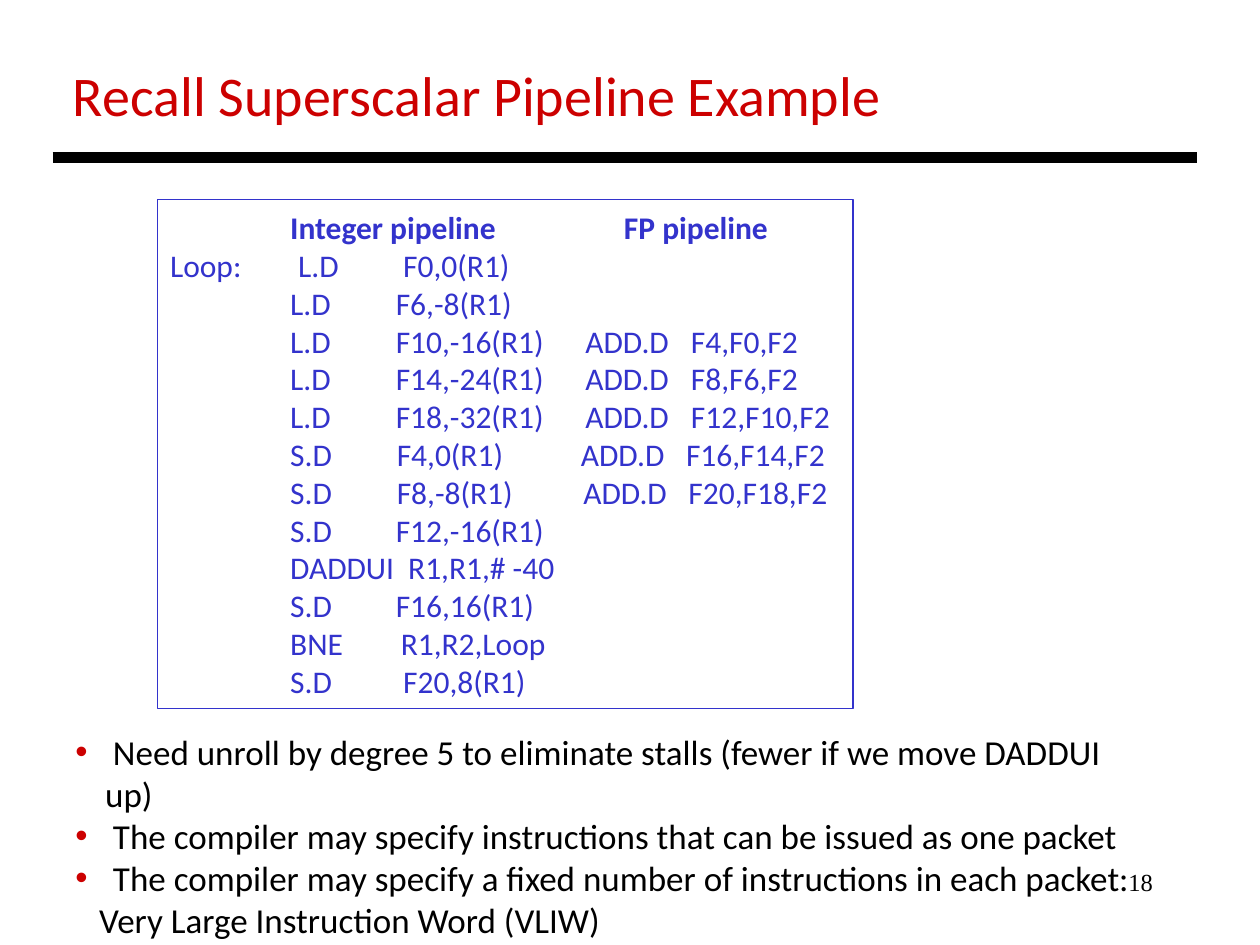
from dataclasses import dataclass

import pptx
import pptx.dml.color
import pptx.enum.shapes
import pptx.enum.text
import pptx.oxml
import pptx.oxml.ns
import pptx.util
from pptx.util import Cm

RED, BLUE, BLACK = "CC0000", "3333CC", "000000"
ALIGN = pptx.enum.text.PP_ALIGN
ANCHOR = pptx.enum.text.MSO_ANCHOR


@dataclass(frozen=True)
class CodeRow:
    """One line of the listing; stops are tab positions in cm."""
    cells: tuple[str, ...]
    stops: tuple[float, ...] = (2.42, 4.55, 8.37, 10.5)
    bold: bool = False


@dataclass(frozen=True)
class Point:
    text: str
    bullet: bool = True


CODE_ROWS = (
    CodeRow(("", "Integer pipeline", "FP pipeline"), (2.42, 9.15), bold=True),
    CodeRow(("Loop:", "L.D", "F0,0(R1)"), (2.58, 4.7)),
    CodeRow(("", "L.D", "F6,-8(R1)")),
    CodeRow(("", "L.D", "F10,-16(R1)", "ADD.D", "F4,F0,F2")),
    CodeRow(("", "L.D", "F14,-24(R1)", "ADD.D", "F8,F6,F2")),
    CodeRow(("", "L.D", "F18,-32(R1)", "ADD.D", "F12,F10,F2")),
    CodeRow(("", "S.D", "F4,0(R1)", "ADD.D", "F16,F14,F2"), (2.42, 4.57, 8.28, 10.4)),
    CodeRow(("", "S.D", "F8,-8(R1)", "ADD.D", "F20,F18,F2"), (2.42, 4.57, 8.33, 10.45)),
    CodeRow(("", "S.D", "F12,-16(R1)")),
    CodeRow(("", "DADDUI", "R1,R1,# -40"), (2.42, 4.8)),
    CodeRow(("", "S.D", "F16,16(R1)")),
    CodeRow(("", "BNE", "R1,R2,Loop"), (2.42, 4.65)),
    CodeRow(("", "S.D", "F20,8(R1)"), (2.42, 4.7)),
)
POINTS = (
    Point(" Need unroll by degree 5 to eliminate stalls (fewer if we move DADDUI up)"),
    Point(" The compiler may specify instructions that can be issued as one packet"),
    Point(" The compiler may specify a fixed number of instructions in each packet:"),
    Point("Very Large Instruction Word (VLIW)", bullet=False),
)


def color(value: str) -> pptx.dml.color.RGBColor:
    return pptx.dml.color.RGBColor.from_string(value)


def format_text(paragraph, size: float, text_color: str, font: str = "Calibri",
                bold: bool = False, align=ALIGN.LEFT) -> None:
    paragraph.alignment = align
    for run in paragraph.runs:
        run.font.name = font
        run.font.size = pptx.util.Pt(size)
        run.font.bold = bold
        run.font.color.rgb = color(text_color)


def add_child(parent, tag: str, **attributes: str):
    child = pptx.oxml.parse_xml(f"<{tag} {pptx.oxml.ns.nsdecls('a')}/>")
    for name, value in attributes.items():
        child.set(name, value)
    parent.append(child)
    return child


def set_tab_stops(paragraph, stops: tuple[float, ...]) -> None:
    tab_list = add_child(paragraph._p.get_or_add_pPr(), "a:tabLst")
    for stop in stops:
        add_child(tab_list, "a:tab", pos=str(Cm(stop)), algn="l")


def set_indent(paragraph, left: float, first_line: float) -> None:
    properties = paragraph._p.get_or_add_pPr()
    properties.set("marL", str(Cm(left)))
    properties.set("indent", str(Cm(first_line)))


def set_bullet(paragraph) -> None:
    properties = paragraph._p.get_or_add_pPr()
    add_child(add_child(properties, "a:buClr"), "a:srgbClr", val=RED)
    add_child(properties, "a:buFont", typeface="Arial")
    add_child(properties, "a:buChar", char="•")


def add_text_box(slide, left: float, top: float, width: float, height: float):
    box = slide.shapes.add_textbox(Cm(left), Cm(top), Cm(width), Cm(height))
    box.text_frame.word_wrap = True
    return box.text_frame


def add_rule(slide) -> None:
    rule = slide.shapes.add_connector(
        pptx.enum.shapes.MSO_CONNECTOR.STRAIGHT, Cm(1.06), Cm(3.18), Cm(24.13), Cm(3.18))
    rule.line.color.rgb = color(BLACK)
    rule.line.width = pptx.util.Pt(6)
    add_child(rule._element.spPr, "a:effectLst")


def add_code(slide) -> None:
    shape = slide.shapes.add_shape(
        pptx.enum.shapes.MSO_SHAPE.RECTANGLE, Cm(3.18), Cm(4.02), Cm(14.02), Cm(10.26))
    shape.shadow.inherit = False
    shape.fill.background()
    shape.line.color.rgb = color(BLUE)
    shape.line.width = pptx.util.Pt(0.75)
    frame = shape.text_frame
    frame.word_wrap = False
    frame.vertical_anchor = ANCHOR.MIDDLE
    frame.text = "\n".join("\t".join(row.cells) for row in CODE_ROWS)
    for paragraph, row in zip(frame.paragraphs, CODE_ROWS):
        format_text(paragraph, 18, BLUE, bold=row.bold)
        set_tab_stops(paragraph, row.stops)


def add_points(slide) -> None:
    frame = add_text_box(slide, 1.27, 14.6, 22, 3.68)
    frame.text = "\n".join(point.text for point in POINTS)
    for paragraph, point in zip(frame.paragraphs, POINTS):
        format_text(paragraph, 20, BLACK)
        if point.bullet:
            set_indent(paragraph, 0.6, -0.6)
            set_bullet(paragraph)
        else:
            set_indent(paragraph, 0.48, 0)


def main() -> None:
    presentation = pptx.Presentation()
    presentation.slide_width, presentation.slide_height = Cm(25.4), Cm(19.05)
    slide = presentation.slides.add_slide(presentation.slide_layouts[6])

    page_number = add_text_box(slide, 18.21, 17.35, 5.28, 1.27)
    page_number.text = "18"
    format_text(page_number.paragraphs[0], 14, BLACK, "Times New Roman", align=ALIGN.RIGHT)

    title = add_text_box(slide, 1.22, 1.09, 18, 1.63)
    title.text = "Recall Superscalar Pipeline Example"
    format_text(title.paragraphs[0], 32, RED)

    add_rule(slide)
    add_code(slide)
    add_points(slide)
    presentation.save("out.pptx")


if __name__ == "__main__":
    main()
